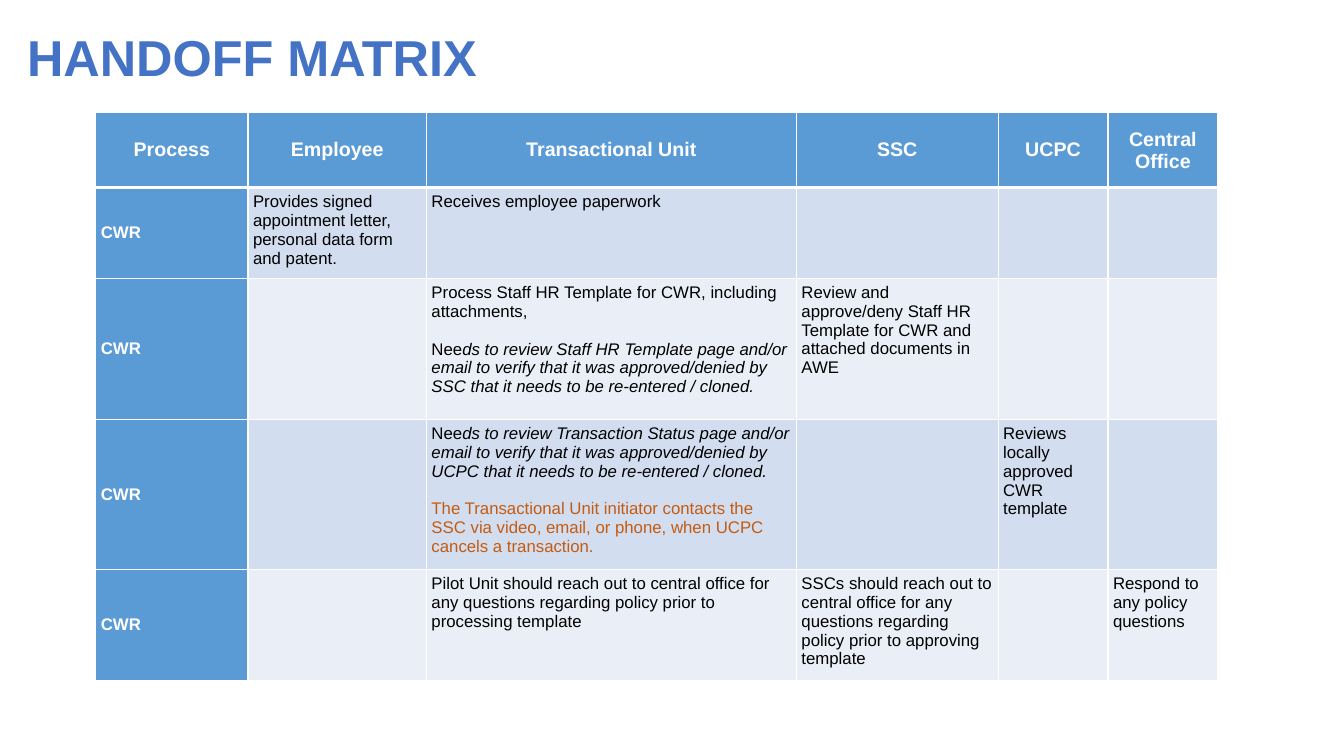
from lxml.etree import SubElement
from pptx import Presentation
from pptx.dml.color import RGBColor
from pptx.enum.text import MSO_ANCHOR as Anchor, PP_ALIGN as Align
from pptx.oxml.ns import qn
from pptx.util import Inches, Pt

COLORS = {
    "title": "4472C4", "head": "5B9BD5", "odd": "D2DEEF", "even": "EAEFF7",
    "white": "FFFFFF", "black": "000000", "accent": "C55A11",
}
FONT = "Arial"
COLUMNS = [1.51, 1.77, 3.67, 2, 1.09, 1.09]
ROWS = [0.74, 0.87, 1.4, 1.41, 1.03]
HEADINGS = ["Process", "Employee", "Transactional Unit", "SSC", "UCPC", "Central Office"]
STEPS = [
    {1: [[("Provides signed appointment letter, personal data form and patent.", "plain")]],
     2: [[("Receives employee paperwork", "plain")]]},
    {2: [[("Process Staff HR Template for CWR, including attachments,", "plain")],
         [("Nee", "plain"),
          ("ds to review Staff HR Template page and/or email to verify that it was "
           "approved/denied by SSC that it needs to be re-entered / cloned.", "italic")]],
     3: [[("Review and approve/deny Staff HR Template for CWR and attached documents in AWE",
           "plain")]]},
    {2: [[("Nee", "plain"),
          ("ds to review Transaction Status page and/or email to verify that it was "
           "approved/denied by UCPC that it needs to be re-entered / cloned.", "italic")],
         [("The Transactional Unit initiator contacts the SSC via video, email, or phone, "
           "when UCPC cancels a transaction.", "accent")]],
     4: [[("Reviews locally approved CWR template", "plain")]]},
    {2: [[("Pilot Unit should reach out to central office for any questions regarding "
           "policy prior to processing template", "plain")]],
     3: [[("SSCs should reach out to central office for any questions regarding policy "
           "prior to approving template", "plain")]],
     5: [[("Respond to any policy questions", "plain")]]},
]
STYLES = {
    "title": (36, "title", True, False),
    "heading": (14, "white", True, False),
    "process": (12, "white", True, False),
    "plain": (12, "black", False, False),
    "italic": (12, "black", False, True),
    "accent": (12, "accent", False, False),
}


def rgb(name):
    return RGBColor.from_string(COLORS[name])


def write(tf, paragraphs, align=Align.LEFT):
    for i, runs in enumerate(paragraphs):
        p = tf.add_paragraph() if i else tf.paragraphs[0]
        p.alignment = align
        if i:
            p.space_before = Pt(13.5)
        for text, style in runs:
            r = p.add_run()
            r.text = text
            size, color, r.font.bold, r.font.italic = STYLES[style]
            r.font.name, r.font.size = FONT, Pt(size)
            r.font.color.rgb = rgb(color)


def format_cell(cell, fill, anchor, top, bottom):
    cell.margin_left = cell.margin_right = Inches(0.05)
    cell.margin_top = cell.margin_bottom = Inches(0.05)
    cell.vertical_anchor = anchor
    tc_pr = cell._tc.get_or_add_tcPr()
    for side, width in (("L", 1), ("R", 1), ("T", top), ("B", bottom)):
        ln = SubElement(tc_pr, qn(f"a:ln{side}"), w=str(Pt(width)))
        solid = SubElement(ln, qn("a:solidFill"))
        SubElement(solid, qn("a:srgbClr"), val=COLORS["white"])
    cell.fill.solid()
    cell.fill.fore_color.rgb = rgb(fill)


def add_title(s, x, y, w, h):
    tf = s.shapes.add_textbox(Inches(x), Inches(y), Inches(w), Inches(h)).text_frame
    tf.word_wrap = True
    tf.vertical_anchor = Anchor.MIDDLE
    write(tf, [[("HANDOFF MATRIX", "title")]])


def add_matrix(s, x, y):
    table = s.shapes.add_table(len(ROWS), len(COLUMNS), Inches(x), Inches(y),
                               Inches(sum(COLUMNS)), Inches(sum(ROWS))).table
    for column, width in zip(table.columns, COLUMNS):
        column.width = Inches(width)
    for row, height in zip(table.rows, ROWS):
        row.height = Inches(height)
    for c, heading in enumerate(HEADINGS):
        cell = table.cell(0, c)
        format_cell(cell, "head", Anchor.MIDDLE, 1, 3)
        write(cell.text_frame, [[(heading, "heading")]], Align.CENTER)
    for n, step in enumerate(STEPS, 1):
        top = 3 if n == 1 else 1
        process = table.cell(n, 0)
        format_cell(process, "head", Anchor.MIDDLE, top, 1)
        write(process.text_frame, [[("CWR", "process")]])
        for c in range(1, len(COLUMNS)):
            cell = table.cell(n, c)
            format_cell(cell, "odd" if n % 2 else "even", Anchor.TOP, top, 1)
            write(cell.text_frame, step.get(c, []))


def main():
    prs = Presentation()
    prs.slide_width, prs.slide_height = Inches(13.33), Inches(7.5)
    s = prs.slides.add_slide(prs.slide_layouts[6])
    add_title(s, 0.17, 0.18, 11.64, 0.75)
    add_matrix(s, 0.95, 1.12)
    prs.save("out.pptx")


if __name__ == "__main__":
    main()
